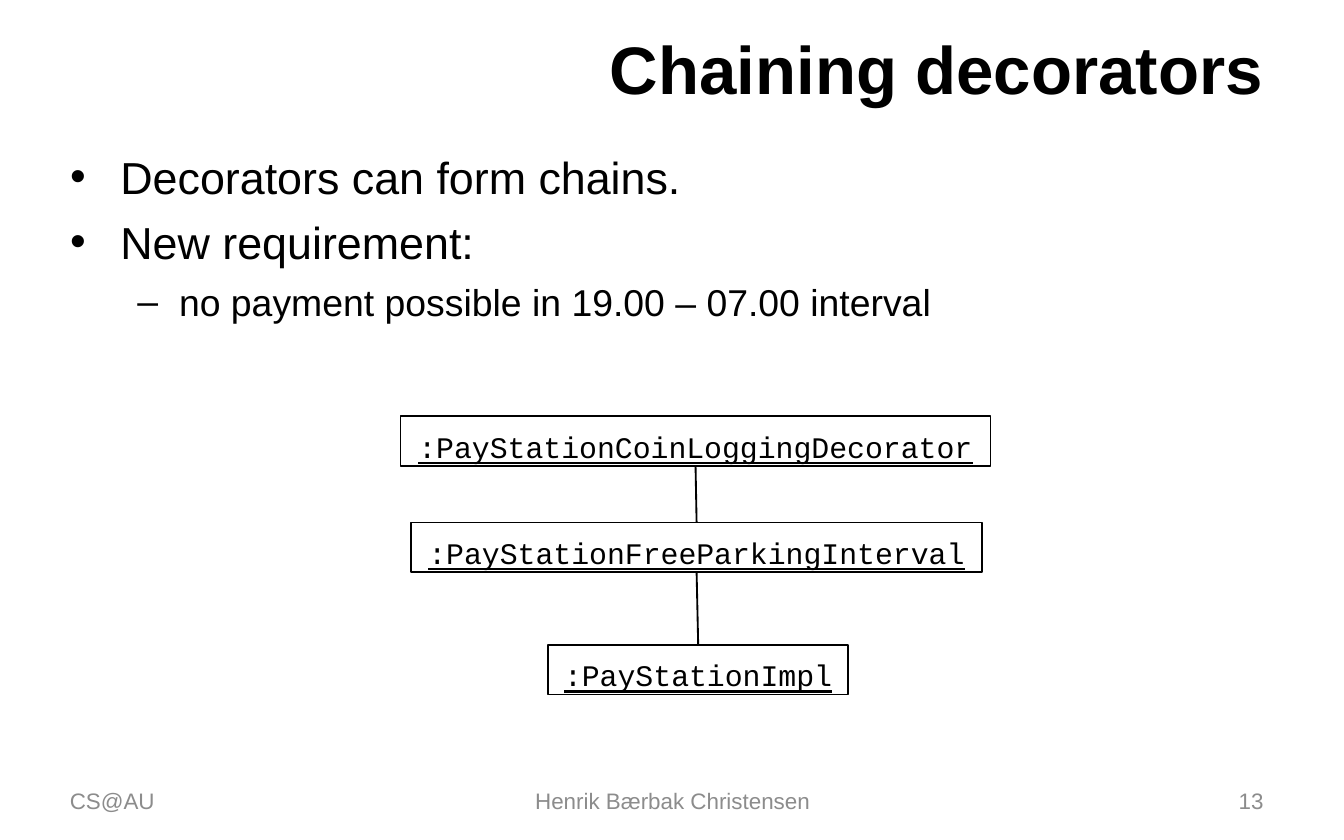
from itertools import pairwise

from pptx import Presentation, util as u
from pptx.dml.color import RGBColor
from pptx.enum import shapes as s, text as t
from pptx.oxml.ns import qn

LEFT, MID, RIGHT = t.PP_ALIGN.LEFT, t.PP_ALIGN.CENTER, t.PP_ALIGN.RIGHT


def color(obj, code):
    """Give a font or fill a solid colour from a hex string."""
    if hasattr(obj, "solid"):
        obj.solid()
        obj = obj.fore_color
    else:
        obj = obj.color
    obj.rgb = RGBColor.from_string(code)


def apply(obj, form):
    """Set the attributes of an object from a dict."""
    for key, val in form.items():
        setattr(obj, key, val)


def place(shape, box):
    """Move a shape to a box given in centimetres."""
    apply(shape, dict(zip(("left", "top", "width", "height"), map(u.Cm, box))))


def write(par, words, form, code="000000", align=LEFT):
    """Put one formatted run into a paragraph."""
    par.alignment = align
    run = par.add_run()
    run.text = words
    apply(run.font, form)
    color(run.font, code)


def title(slide, box, words):
    """Fill the title placeholder."""
    shape = slide.shapes.title
    place(shape, box)
    frame = shape.text_frame
    apply(frame, {"auto_size": t.MSO_AUTO_SIZE.NONE,
                  "vertical_anchor": t.MSO_ANCHOR.MIDDLE})
    write(frame.paragraphs[0], words,
          {"name": "Arial", "size": u.Pt(36), "bold": True}, align=RIGHT)


def body(slide, box, items):
    """Fill the body placeholder with a list of level and words."""
    shape = slide.placeholders[1]
    place(shape, box)
    frame = shape.text_frame
    frame.auto_size = t.MSO_AUTO_SIZE.NONE
    looks = [(24, 0.95, -0.95), (20, 2.06, -0.79)]
    for num, (level, words) in enumerate(items):
        par = frame.add_paragraph() if num else frame.paragraphs[0]
        size, edge, hang = looks[level]
        apply(par, {"level": level, "space_before": u.Pt(6 if num else 0)})
        props = par._p.get_or_add_pPr()
        props.set("marL", str(u.Cm(edge)))
        props.set("indent", str(u.Cm(hang)))
        write(par, words, {"name": "Arial", "size": u.Pt(size)})


def chain(slide, box, nodes):
    """Draw object boxes down a column and link each to the next."""
    left, top, width, high = box
    made = []
    for words, wide, down, shift in nodes:
        node = slide.shapes.add_shape(s.MSO_SHAPE.RECTANGLE, 0, 0, 0, 0)
        place(node, (left + (width - wide) / 2 + shift, top + down, wide, high))
        node.shadow.inherit = False
        node.fill.background()
        color(node.line.fill, "000000")
        node.line.width = u.Pt(1)
        frame = node.text_frame
        apply(frame, {"word_wrap": False, "margin_top": u.Cm(0.25),
                      "margin_bottom": u.Cm(0.05),
                      "vertical_anchor": t.MSO_ANCHOR.MIDDLE})
        write(frame.paragraphs[0], words,
              {"name": "Courier New", "size": u.Pt(16), "underline": True},
              align=MID)
        made.append(node)
    for upper, lower in pairwise(made):
        link = slide.shapes.add_connector(s.MSO_CONNECTOR.STRAIGHT, 0, 0, 0, 0)
        link.begin_connect(upper, 2)
        link.end_connect(lower, 0)
        color(link.line.fill, "000000")
        link.line.width = u.Pt(1)
        props = link._element.spPr
        props.append(props.makeelement(qn("a:effectLst"), {}))


def footer(slide, box, parts):
    """Write the footer texts along a strip."""
    left, top, _, high = box
    for words, start, wide, align in parts:
        label = slide.shapes.add_textbox(0, 0, 0, 0)
        place(label, (left + start, top, wide, high))
        frame = label.text_frame
        apply(frame, {"word_wrap": True,
                      "vertical_anchor": t.MSO_ANCHOR.MIDDLE})
        write(frame.paragraphs[0], words,
              {"name": "Arial", "size": u.Pt(12)}, "8C8C8C", align)


def main():
    """Build and save the slide."""
    deck = Presentation()
    apply(deck, {"slide_width": u.Cm(25.4), "slide_height": u.Cm(15.88)})
    slide = deck.slides.add_slide(deck.slide_layouts[1])
    title(slide, (1.27, 0.46, 22.86, 1.65), "Chaining decorators")
    body(slide, (1.07, 2.7, 23.06, 11.93), [
        (0, "Decorators can form chains."),
        (0, "New requirement:"),
        (1, "no payment possible in 19.00 – 07.00 interval"),
    ])
    chain(slide, (7.57, 7.87, 11.15, 0.94), [
        (":PayStationCoinLoggingDecorator", 11.15, 0, 0),
        (":PayStationFreeParkingInterval", 10.8, 2.01, 0.02),
        (":PayStationImpl", 5.66, 4.32, 0.05),
    ])
    footer(slide, (1.07, 14.71, 23.06, 0.84), [
        ("CS@AU", 0, 5.92, LEFT),
        ("Henrik Bærbak Christensen", 7.62, 8.05, MID),
        ("13", 17.14, 5.92, RIGHT),
    ])
    deck.save("out.pptx")


if __name__ == "__main__":
    main()
